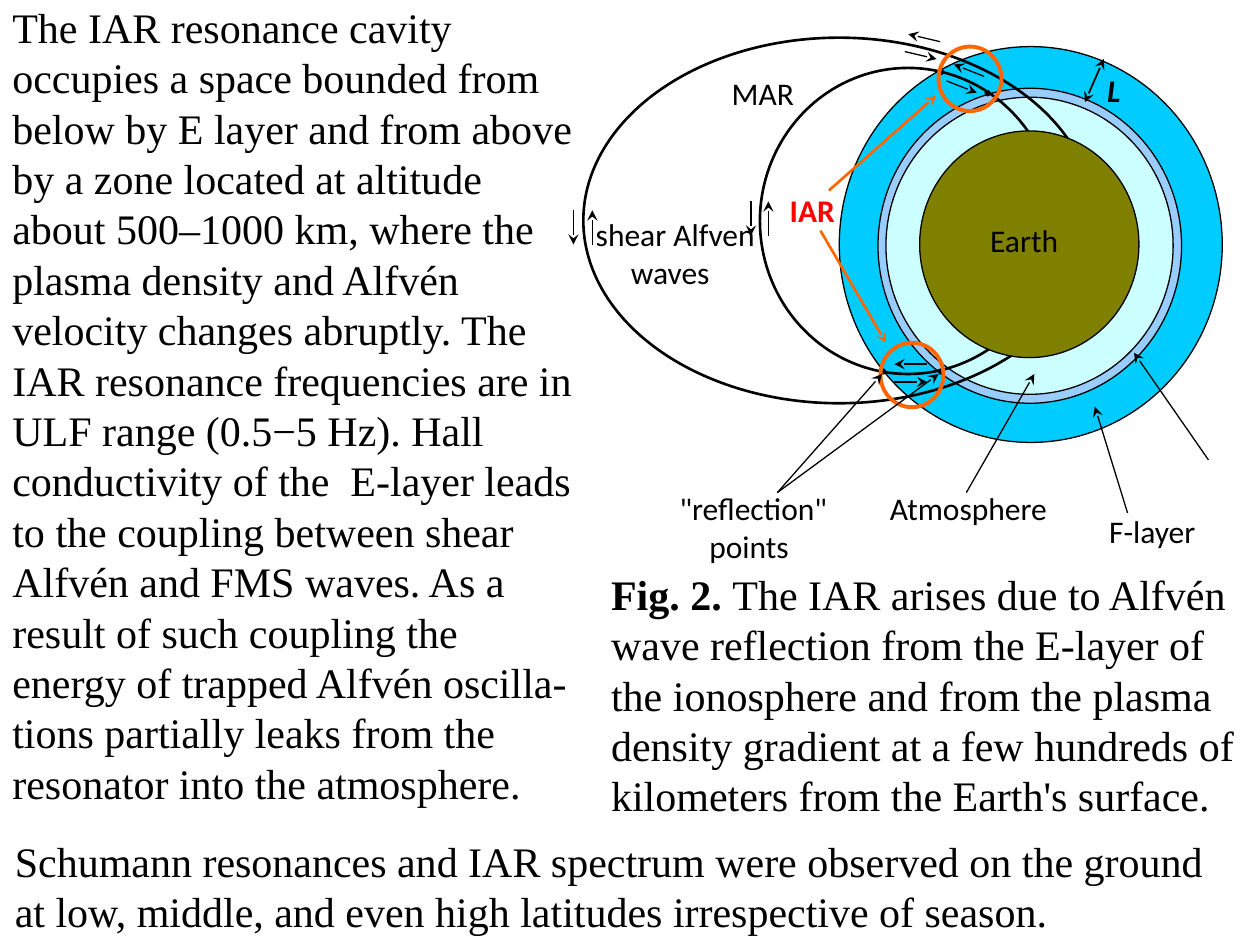
import pptx
import pptx.dml.color
import pptx.enum.shapes
import pptx.oxml.ns
import pptx.util
from lxml import etree

Cm = pptx.util.Cm
Pt = pptx.util.Pt
SHAPES = pptx.enum.shapes.MSO_SHAPE
STRAIGHT = pptx.enum.shapes.MSO_CONNECTOR.STRAIGHT
qn = pptx.oxml.ns.qn


def color(value):
    return pptx.dml.color.RGBColor.from_string(value)


def write(shape, paragraphs, formats):
    frame = shape.text_frame
    frame.word_wrap = True
    frame.vertical_anchor = pptx.enum.text.MSO_ANCHOR.TOP
    for index, (indent, runs) in enumerate(paragraphs):
        paragraph = frame.add_paragraph() if index else frame.paragraphs[0]
        paragraph.alignment = pptx.enum.text.PP_ALIGN.LEFT
        if indent:
            paragraph._p.get_or_add_pPr().set("marL", str(int(Cm(indent))))
        for text, extra in runs:
            run = paragraph.add_run()
            run.text = text
            run.font.color.rgb = color("000000")
            for name, value in {**formats, **extra}.items():
                if name == "color":
                    run.font.color.rgb = color(value)
                else:
                    setattr(run.font, name, value)


presentation = pptx.Presentation()
presentation.slide_width = Cm(25.4)
presentation.slide_height = Cm(19.05)
slide = presentation.slides.add_slide(presentation.slide_layouts[6])

f_layer = (16.92, 0.94, 7.72, 7.98, "00CCFF", "000000", 0.75)
e_layer = (17.7, 1.78, 6.12, 6.35, "99CCFF", "000000", 0.75)
reflection_points = [
    (left, top, 0.1, 0.1, "000000", "000000", 0.75)
    for left, top in [(17.75, 7.44), (18.92, 1.4), (19.86, 1.83), (18.92, 7.44)]
]
atmosphere = (17.86, 1.96, 5.79, 5.99, "CCFFFF", "000000", 0.75)
inner_field_line = (15.32, 1.37, 5.97, 6.17, None, "000000", 1.5)
outer_field_line = (11.76, 0.76, 10.31, 7.37, None, "000000", 1.5)
earth = (18.54, 2.64, 4.42, 4.57, "808000", "000000", 0.75)
resonators = [
    (left, top, 1.27, 1.3, None, "FF6600", 2.25)
    for left, top in [(18.92, 0.94), (17.75, 6.91)]
]

for left, top, width, height, fill, line, weight in [
    f_layer, e_layer, *reflection_points, atmosphere,
    inner_field_line, outer_field_line, earth, *resonators,
]:
    shape = slide.shapes.add_shape(SHAPES.OVAL, Cm(left), Cm(top), Cm(width), Cm(height))
    shape.shadow.inherit = False
    if fill:
        shape.fill.solid()
        shape.fill.fore_color.rgb = color(fill)
    else:
        shape.fill.background()
    shape.line.color.rgb = color(line)
    shape.line.width = Pt(weight)

earth_label = slide.shapes.add_shape(SHAPES.RECTANGLE, Cm(19.71), Cm(4.34), Cm(2.34), Cm(0.94))
earth_label.shadow.inherit = False
earth_label.fill.solid()
earth_label.fill.fore_color.rgb = color("808000")
earth_label.line.fill.background()
label_formats = {"name": "Calibri", "size": Pt(18)}
write(earth_label, [(0, [("Earth", {})])], label_formats)

HEAD, TAIL = ["headEnd"], ["tailEnd"]
arrows = [
    (22.25, 1.19, 21.87, 2.06, "000000", 1, HEAD + TAIL),
    (22.73, 10.34, 22.07, 8.2, "000000", 0.75, TAIL),
    (24.36, 9.27, 22.86, 7.11, "000000", 0.75, TAIL),
    (17.78, 7.54, 15.67, 9.93, "000000", 0.75, HEAD),
    (15.67, 9.93, 18.92, 7.54, "000000", 0.75, TAIL),
    (19.48, 9.93, 20.85, 7.54, "000000", 0.75, TAIL),
    (18.87, 1.93, 16.71, 3.84, "FF6600", 1.5, HEAD),
    (17.86, 6.91, 16.54, 4.65, "FF6600", 1.5, HEAD),
]
wave_pairs = [
    ((11.56, 4.24), (11.94, 4.24), (0, 0.69)),
    ((15.14, 4.06), (15.49, 4.06), (0, 0.69)),
    ((18.03, 7.7), (18.03, 7.34), (0.66, 0)),
    ((19.08, 1.63), (19.23, 1.3), (0.61, 0.24)),
    ((18.24, 1.04), (18.31, 0.69), (0.64, 0.15)),
]
for forward, backward, (dx, dy) in wave_pairs:
    for (x, y), ends in [(forward, TAIL), (backward, HEAD)]:
        arrows.append((x, y, x + dx, y + dy, "000000", 0.75, ends))

for x1, y1, x2, y2, line, weight, ends in arrows:
    connector = slide.shapes.add_connector(STRAIGHT, Cm(x1), Cm(y1), Cm(x2), Cm(y2))
    connector.line.color.rgb = color(line)
    connector.line.width = Pt(weight)
    for end in ends:
        etree.SubElement(connector.line._get_or_add_ln(), qn("a:" + end), type="stealth")
    etree.SubElement(connector._element.spPr, qn("a:effectLst"))

body_formats = {"name": "Times New Roman", "size": Pt(24)}
texts = [
    (13.34, 9.73, 4.27, 2.01, label_formats,
     [(0.11, [("\"reflection\"", {})]), (0.71, [("points", {})])]),
    (15.67, 3.73, 2.01, 0.94, label_formats, [(0, [("IAR", {"bold": True, "color": "FF0000"})])]),
    (14.5, 1.37, 2.41, 0.94, label_formats, [(0, [("MAR", {})])]),
    (11.76, 4.22, 4.27, 2.24, label_formats,
     [(0, [("shear Alfven", {})]), (0.71, [("waves", {})])]),
    (22.07, 1.3, 1.32, 1.37, label_formats, [(0, [("L", {"bold": True, "italic": True})])]),
    (17.58, 9.73, 4.27, 1.24, label_formats, [(0.11, [("Atmosphere", {})])]),
    (22, 10.19, 3.18, 0.94, label_formats, [(0.11, [("F-layer", {})])]),
    (12.07, 11.33, 13.41, 5.38, body_formats, [(0, [
        ("Fig. 2. ", {"bold": True}),
        ("The IAR arises due to Alfvén wave reflection from the E-layer of the ionosphere "
         "and from the plasma density gradient at a few hundreds of kilometers from the "
         "Earth's surface.", {}),
    ])]),
    (0, -0.1, 11.94, 16.66, body_formats, [(0, [
        ("The IAR resonance cavity occupies a space bounded from below by E layer and from "
         "above by a zone located at altitude about 500–1000 km, where the plasma density "
         "and Alfvén velocity changes abruptly. The IAR resonance frequencies are in ULF "
         "range (0.5−5 Hz). Hall conductivity of the  E-layer leads to the coupling between "
         "shear Alfvén and FMS waves. As a result of such coupling the energy of trapped "
         "Alfvén oscilla-tions partially leaks from the resonator into the atmosphere.", {}),
    ])]),
    (0.05, 16.71, 25.25, 2.31, body_formats, [(0, [
        ("Schumann resonances and IAR spectrum were observed on the ground at low, middle, "
         "and even high latitudes irrespective of season.", {}),
    ])]),
]
for left, top, width, height, formats, paragraphs in texts:
    textbox = slide.shapes.add_textbox(Cm(left), Cm(top), Cm(width), Cm(height))
    write(textbox, paragraphs, formats)

presentation.save("out.pptx")
